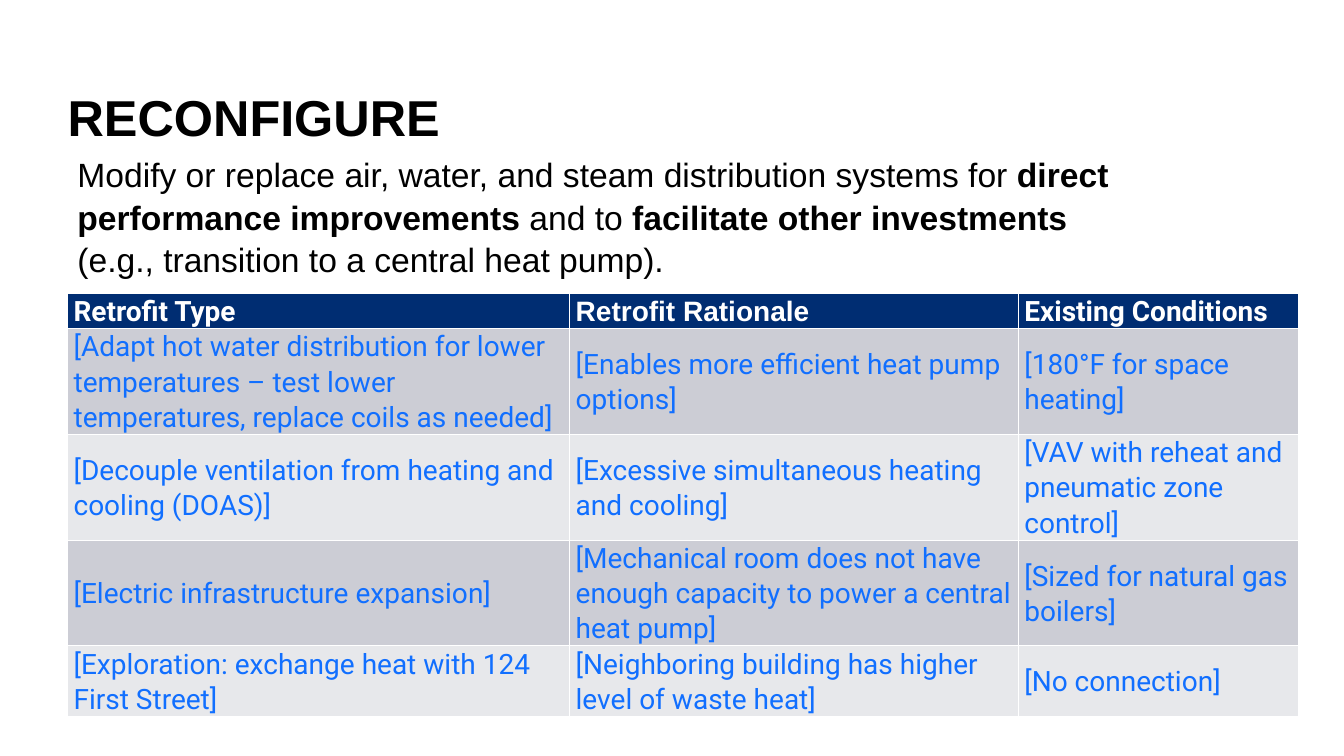
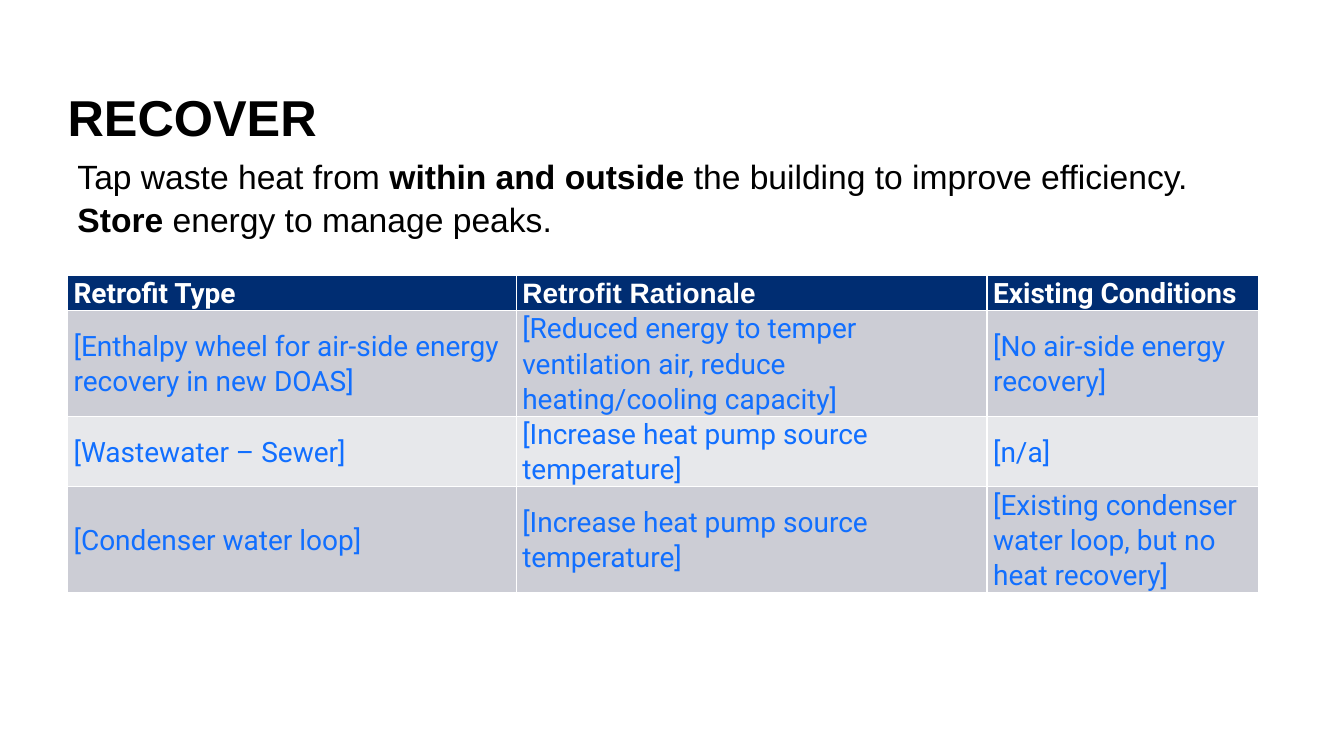
"""Builds two retrofit slides, each with a title, a summary and a table."""
from dataclasses import dataclass

from pptx import Presentation
from pptx import util as u
from pptx.dml.color import RGBColor
from pptx.enum import text

PX = 9144


@dataclass(frozen=True)
class Theme:
    black: str = "000000"
    white: str = "FFFFFF"
    navy: str = "002D72"
    blue: str = "116FFF"
    bands: tuple = ("CCCDD5", "E7E8EB")
    sans: str = "Arial"
    table_font: str = "Roboto"
    title_size: int = 36
    body_size: int = 24
    table_size: int = 20


def px(n):
    return u.Emu(n * PX)


def put(obj, **values):
    for name, value in values.items():
        setattr(obj, name, value)


class Deck:
    def __init__(self, theme):
        self.t = theme
        self.prs = Presentation()
        put(self.prs, slide_width=px(1333), slide_height=px(750))
        self.s = None

    def add_runs(self, p, content, name, size, color, bold=False):
        for i, part in enumerate(content.split("**")):
            if part:
                r = p.add_run()
                r.text = part
                put(r.font, name=name, size=u.Pt(size), bold=bold or i % 2 == 1)
                r.font.color.rgb = RGBColor.from_string(color)

    def title(self, content):
        self.s = self.prs.slides.add_slide(self.prs.slide_layouts[5])
        sp = self.s.shapes.title
        put(sp, left=px(67), top=px(57), width=px(1200), height=px(125))
        tf = sp.text_frame
        put(tf, margin_left=0, margin_top=0, margin_right=0, margin_bottom=0,
            word_wrap=True, auto_size=text.MSO_AUTO_SIZE.NONE,
            vertical_anchor=text.MSO_ANCHOR.MIDDLE)
        p = tf.paragraphs[0]
        put(p, alignment=text.PP_ALIGN.LEFT, line_spacing=0.9)
        self.add_runs(p, content, self.t.sans, self.t.title_size, self.t.black, True)

    def table(self, top, height, widths, rows):
        frame = self.s.shapes.add_table(len(rows), len(widths), px(67), px(top),
                                        px(sum(widths)), px(height))
        tbl = frame.table
        for col, width in zip(tbl.columns, widths):
            col.width = px(width)
        for i, row in enumerate(rows):
            tbl.rows[i].height = px(15)
            for j, content in enumerate(row):
                self.cell(tbl.cell(i, j), content, i, j)

    def cell(self, cell, content, i, j):
        t = self.t
        header = i == 0
        put(cell, margin_left=px(6), margin_right=px(6), margin_top=0,
            margin_bottom=0, vertical_anchor=text.MSO_ANCHOR.MIDDLE)
        cell.fill.solid()
        fill = t.navy if header else t.bands[(i - 1) % 2]
        cell.fill.fore_color.rgb = RGBColor.from_string(fill)
        p = cell.text_frame.paragraphs[0]
        put(p, line_spacing=1.07, space_after=u.Pt(8))
        font = t.sans if header and j == 1 else t.table_font
        self.add_runs(p, content, font, t.table_size, t.white if header else t.blue, header)

    def summary(self, top, width, height, *paragraphs):
        sp = self.s.shapes.add_textbox(px(67), px(top), px(width), px(height))
        tf = sp.text_frame
        put(tf, word_wrap=True, auto_size=text.MSO_AUTO_SIZE.SHAPE_TO_FIT_TEXT)
        for i, content in enumerate(paragraphs):
            p = tf.add_paragraph() if i else tf.paragraphs[0]
            p.line_spacing = 1.05
            self.add_runs(p, content, self.t.sans, self.t.body_size, self.t.black)


HEADER = ("Retrofit Type", "Retrofit Rationale", "Existing Conditions")


def main():
    deck = Deck(Theme())

    deck.title("RECONFIGURE")
    deck.table(291, 418, (498, 445, 278), (
        HEADER,
        ("[Adapt hot water distribution for lower temperatures – test lower "
         "temperatures, replace coils as needed]",
         "[Enables more efficient heat pump options]",
         "[180°F for space heating]"),
        ("[Decouple ventilation from heating and cooling (DOAS)]",
         "[Excessive simultaneous heating and cooling]",
         "[VAV with reheat and pneumatic zone control]"),
        ("[Electric infrastructure expansion]",
         "[Mechanical room does not have enough capacity to power a central heat pump]",
         "[Sized for natural gas boilers]"),
        ("[Exploration: exchange heat with 124 First Street]",
         "[Neighboring building has higher level of waste heat]",
         "[No connection]"),
    ))
    deck.summary(146, 1220, 131,
                 "Modify or replace air, water, and steam distribution systems for "
                 "**direct performance improvements** and to "
                 "**facilitate other investments**",
                 "(e.g., transition to a central heat pump).")

    deck.title("RECOVER")
    deck.table(273, 313, (445, 467, 269), (
        HEADER,
        ("[Enthalpy wheel for air-side energy recovery in new DOAS]",
         "[Reduced energy to temper ventilation air, reduce heating/cooling capacity]",
         "[No air-side energy recovery]"),
        ("[Wastewater – Sewer]", "[Increase heat pump source temperature]", "[n/a]"),
        ("[Condenser water loop]",
         "[Increase heat pump source temperature]",
         "[Existing condenser water loop, but no heat recovery]"),
    ))
    deck.summary(148, 1160, 91,
                 "Tap waste heat from **within and outside **the building to improve "
                 "efficiency. **Store** energy to manage peaks.")

    deck.prs.save("out.pptx")


if __name__ == "__main__":
    main()
